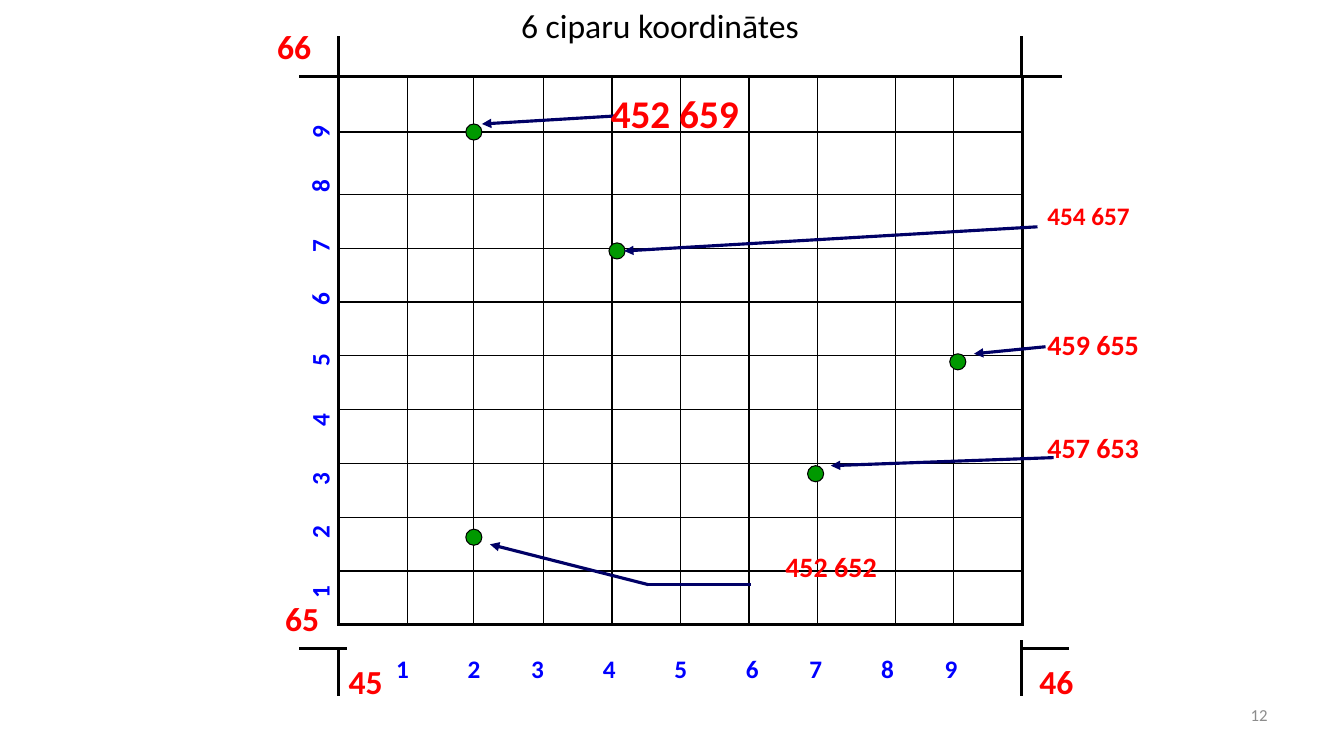
"""Build the slide explaining six-figure grid coordinates."""
from lxml.etree import SubElement
from pptx import Presentation
from pptx.dml.color import RGBColor
from pptx.enum.shapes import MSO_CONNECTOR as Connector, MSO_SHAPE as Shape
from pptx.enum.text import MSO_ANCHOR as Anchor, MSO_AUTO_SIZE as AutoSize, PP_ALIGN as Align
from pptx.oxml import parse_xml
from pptx.oxml.ns import nsdecls, qn
from pptx.util import Inches, Pt

COLORS = {"black": "000000", "red": "FF0000", "blue": "0000FF",
          "navy": "000066", "green": "009900", "gray": "8C8C8C"}
FONT = "Calibri"
HEAVY, THIN = 2.25, 1

GRID_LEFT, GRID_TOP, GRID_RIGHT, FRAME_BOTTOM = 3.36, 0.76, 10.13, 6.43
COLUMN_WIDTHS = [0.68, 0.66, 0.69] + [0.68] * 4 + [0.77, 0.58, 0.68]
ROW_HEIGHTS = [0.55, 0.62] + [4.27 / 8] * 8

CORNER_TICKS = [
    ((GRID_LEFT, FRAME_BOTTOM), (GRID_LEFT, 6.9)),
    ((GRID_LEFT, GRID_TOP), (GRID_LEFT, 0.36)),
    ((GRID_RIGHT, GRID_TOP), (GRID_RIGHT, 0.36)),
    ((GRID_RIGHT, 6.35), (GRID_RIGHT, 6.9)),
    ((3.44, GRID_TOP), (2.97, GRID_TOP)),
    ((3.44, FRAME_BOTTOM), (2.97, FRAME_BOTTOM)),
    ((GRID_RIGHT, GRID_TOP), (10.53, GRID_TOP)),
    ((GRID_RIGHT, FRAME_BOTTOM), (10.6, FRAME_BOTTOM)),
]
CORNER_NUMBERS = [("45", 3.36, 6.51, 0.63), ("65", 2.73, 5.88, 0.63),
                  ("66", 2.65, 0.21, 0.63), ("46", 10.21, 6.51, 0.71)]
EASTING_DIGITS = [(3.83, 0.32), (4.54, 0.31), (5.17, 0.39), (5.88, 0.39), (6.59, 0.47),
                  (7.3, 0.47), (7.93, 0.47), (8.64, 0.47), (9.27, 0.39)]
NORTHING_DIGITS = [(5.7, 0.27), (5.11, 0.26), (4.55, 0.33), (3.96, 0.33), (3.33, 0.4),
                   (2.73, 0.4), (2.2, 0.4), (1.61, 0.4), (1.11, 0.33)]
NORTHING_CENTER = 3.17
POINTS = [(4.62, 1.23), (9.42, 3.51), (8.01, 4.62), (4.62, 5.25), (6.04, 2.41)]
POINTERS = [((6.11, 1.15), (4.78, 1.23)), ((10.37, 3.44), (9.66, 3.51)),
            ((10.45, 4.54), (8.24, 4.62)), ((10.29, 2.25), (6.19, 2.49)),
            ((6.43, 5.8), (4.86, 5.4))]
COORDINATES = [("452 659", (5.96, 0.84, 1.65, 0.57), 28),
               ("459 655", (10.29, 3.2, 1.38, 0.43), 20),
               ("457 653", (10.29, 4.22, 1.38, 0.43), 20),
               ("454 657", (10.29, 1.94, 1.38, 0.4), 18),
               ("452 652", (7.69, 5.4, 1.57, 0.43), 20)]


def color(name):
    """Return the named palette colour."""
    return RGBColor.from_string(COLORS[name])


class GridSlide:
    """Hold the current slide and draw its elements in one style."""

    def __init__(self, slide):
        """Keep the slide to draw on."""
        self.slide = slide
        self.shapes = slide.shapes

    def set_text(self, frame, text, size, ink, bold=True, align=Align.LEFT):
        """Put one formatted line into a text frame."""
        frame.word_wrap = True
        frame.text = text
        paragraph = frame.paragraphs[0]
        paragraph.alignment = align
        font = paragraph.runs[0].font
        font.name, font.size, font.bold = FONT, Pt(size), bold
        font.color.rgb = color(ink)

    def title(self, text, box):
        """Place and format the title placeholder."""
        heading = self.shapes.title
        heading.left, heading.top, heading.width, heading.height = map(Inches, box)
        frame = heading.text_frame
        frame.vertical_anchor = Anchor.TOP
        frame.auto_size = AutoSize.NONE
        self.set_text(frame, text, 24, "black", bold=False, align=Align.CENTER)

    def label(self, text, box, size, ink, group=None, rotation=0):
        """Add a bold text label, optionally inside a group."""
        holder = group.shapes if group else self.shapes
        label = holder.add_textbox(*map(Inches, box))
        label.rotation = rotation
        self.set_text(label.text_frame, text, size, ink)
        label.text_frame.auto_size = AutoSize.SHAPE_TO_FIT_TEXT

    def page_number(self, text, box):
        """Add the slide number at the lower right."""
        frame = self.shapes.add_textbox(*map(Inches, box)).text_frame
        frame.vertical_anchor = Anchor.MIDDLE
        self.set_text(frame, text, 12, "gray", bold=False, align=Align.RIGHT)

    def line(self, start, end, ink, arrow=False):
        """Add a straight heavy line with an optional arrowhead."""
        line = self.shapes.add_connector(Connector.STRAIGHT, *map(Inches, start + end))
        line.line.color.rgb = color(ink)
        line.line.width = Pt(HEAVY)
        properties = line._element.spPr
        if arrow:
            SubElement(properties.find(qn("a:ln")), qn("a:tailEnd"), type="triangle")
        SubElement(properties, qn("a:effectLst"))

    def point(self, left, top, size=0.16):
        """Add a green point marker."""
        point = self.shapes.add_shape(Shape.OVAL, *map(Inches, (left, top, size, size)))
        point.shadow.inherit = False
        point.fill.solid()
        point.fill.fore_color.rgb = color("green")
        point.line.color.rgb = color("black")
        point.line.width = Pt(0.75)

    def border(self, cell, widths):
        """Set the left, right, top and bottom borders of a cell."""
        properties = cell._tc.get_or_add_tcPr()
        for index, (side, width) in enumerate(zip("LRTB", widths)):
            properties.insert(index, parse_xml(
                f'<a:ln{side} {nsdecls("a")} w="{Pt(width)}"><a:solidFill>'
                f'<a:srgbClr val="{COLORS["black"]}"/></a:solidFill></a:ln{side}>'))

    def grid(self, left, top, widths, heights):
        """Add the empty table with a heavy outline."""
        box = map(Inches, (left, top, sum(widths), sum(heights)))
        table = self.shapes.add_table(len(heights), len(widths), *box).table
        table.first_row = table.horz_banding = False
        for column, width in zip(table.columns, widths):
            column.width = Inches(width)
        last_row, last_column = len(heights) - 1, len(widths) - 1
        for r, height in enumerate(heights):
            table.rows[r].height = Inches(height)
            for c in range(len(widths)):
                cell = table.cell(r, c)
                cell.fill.background()
                outer = (c == 0, c == last_column, r == 0, r == last_row)
                self.border(cell, [HEAVY if edge else THIN for edge in outer])


def main():
    """Assemble and save the slide."""
    deck = Presentation()
    deck.slide_width, deck.slide_height = Inches(13.33), Inches(7.5)
    page = GridSlide(deck.slides.add_slide(deck.slide_layouts[5]))

    page.title("6 ciparu koordinātes", (3.83, 0, 5.43, 0.5))
    page.page_number("12", (9.56, 6.83, 3.11, 0.52))
    page.grid(GRID_LEFT, GRID_TOP, COLUMN_WIDTHS, ROW_HEIGHTS)
    for start, end in CORNER_TICKS:
        page.line(start, end, "black")
    for number, left, top, width in CORNER_NUMBERS:
        page.label(number, (left, top, width, 0.5), 24, "red")

    eastings = page.shapes.add_group_shape()
    for digit, (left, width) in enumerate(EASTING_DIGITS, 1):
        page.label(str(digit), (left, FRAME_BOTTOM, width, 0.4), 18, "blue", eastings)
    northings = page.shapes.add_group_shape()
    for digit, (top, width) in enumerate(NORTHING_DIGITS, 1):
        box = (NORTHING_CENTER - width / 2, top, width, 0.4)
        page.label(str(digit), box, 18, "blue", northings, rotation=270)

    for left, top in POINTS:
        page.point(left, top)
    for start, end in POINTERS:
        page.line(start, end, "navy", arrow=True)
    page.line((6.43, 5.8), (7.45, 5.8), "navy")
    for coordinate, box, size in COORDINATES:
        page.label(coordinate, box, size, "red")

    deck.save("out.pptx")


if __name__ == "__main__":
    main()
